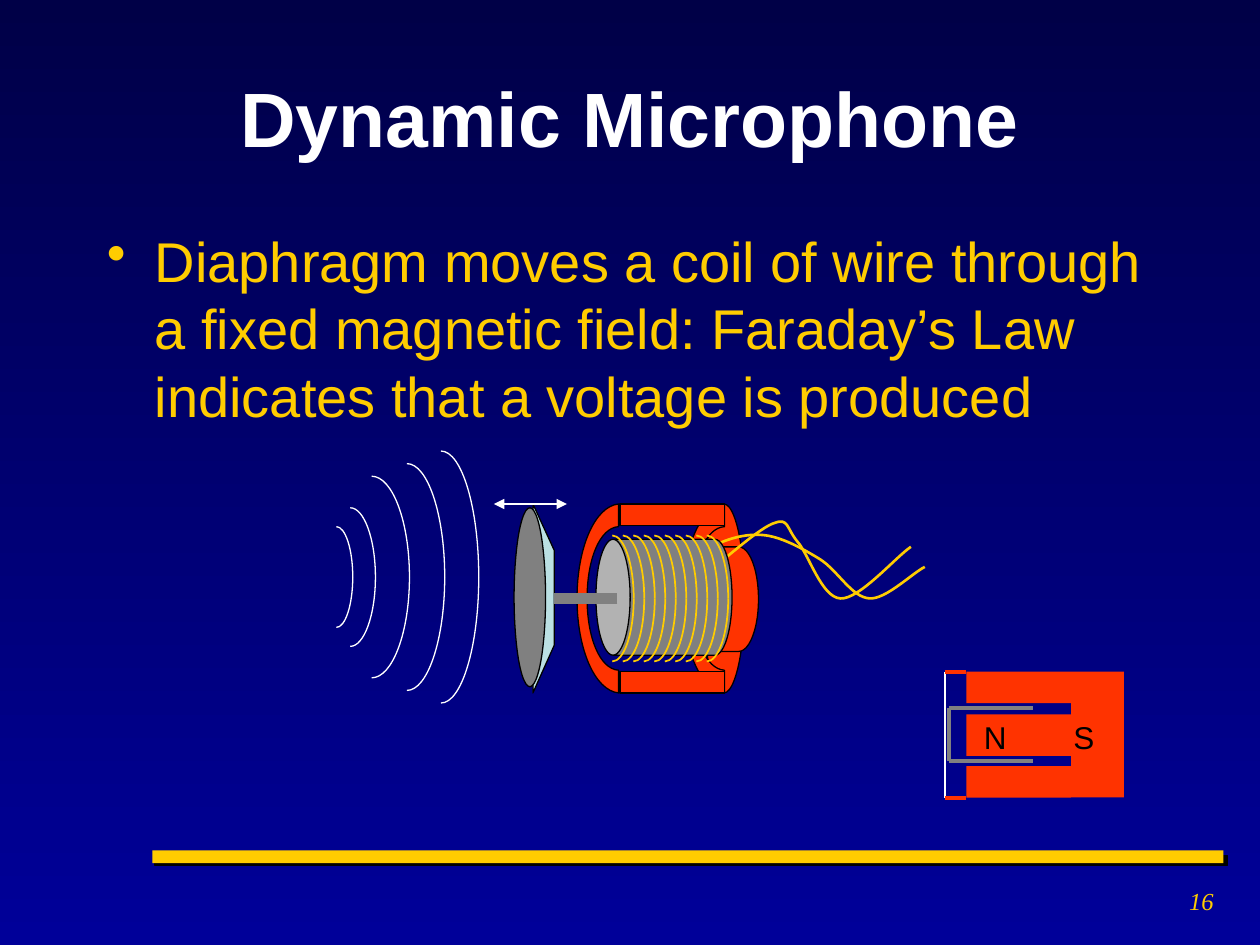
from lxml import etree
from pptx import Presentation
from pptx.dml.color import RGBColor
from pptx.enum.shapes import MSO_CONNECTOR, MSO_SHAPE
from pptx.enum.text import MSO_ANCHOR, PP_ALIGN
from pptx.oxml.ns import qn
from pptx.util import Inches, Pt

RECT, OVAL, CAN = MSO_SHAPE.RECTANGLE, MSO_SHAPE.OVAL, MSO_SHAPE.CAN
STRAIGHT = MSO_CONNECTOR.STRAIGHT
LEFT, CENTER, RIGHT = PP_ALIGN.LEFT, PP_ALIGN.CENTER, PP_ALIGN.RIGHT
TOP, MIDDLE = MSO_ANCHOR.TOP, MSO_ANCHOR.MIDDLE

COLORS = {
    "night": "000047", "navy": "000099", "gold": "FFCC00", "red": "FF3300",
    "gray": "808080", "ice": "BBE0E3", "white": "FFFFFF", "black": "000000",
}


def rgb(name):
    return RGBColor.from_string(COLORS[name])


def paint(shape, fill, line, weight):
    shape.shadow.inherit = False
    if fill:
        shape.fill.solid()
        shape.fill.fore_color.rgb = rgb(fill)
    else:
        shape.fill.background()
    if line:
        shape.line.color.rgb = rgb(line)
        shape.line.width = Pt(weight)
    else:
        shape.line.fill.background()


def add_preset(slide, kind, box, fill, line=None, weight=0.75):
    shape = slide.shapes.add_shape(kind, *map(Inches, box))
    paint(shape, fill, line, weight)
    return shape


def add_lying_can(slide, box, depth, fill):
    can = add_preset(slide, CAN, box, fill, "black")
    can.rotation = 270
    can.adjustments[0] = depth


def add_line(slide, start, end, color, weight, arrows=False):
    line = slide.shapes.add_connector(STRAIGHT, *map(Inches, (*start, *end)))
    line.line.color.rgb = rgb(color)
    line.line.width = Pt(weight)
    if arrows:
        stroke = line.line._get_or_add_ln()
        for end_tag in ("a:headEnd", "a:tailEnd"):
            etree.SubElement(stroke, qn(end_tag), type="triangle")
    etree.SubElement(line._element.spPr, qn("a:effectLst"))


def add_outline(slide, origin, start, segments, fill, line, weight, close=False):
    def place(point):
        return Inches(origin[0] + point[0]), Inches(origin[1] + point[1])

    builder = slide.shapes.build_freeform(*place(start))
    builder.add_line_segments([place(p) for s in segments for p in s], close=close)
    shape = builder.convert_to_shape()
    steps = iter(list(shape._element.iter(qn("a:lnTo"))))
    for segment in segments:
        step = next(steps)
        if len(segment) == 3:
            curve = etree.Element(qn("a:cubicBezTo"))
            step.getparent().replace(step, curve)
            curve.append(step[0])
            for _ in range(2):
                control = next(steps)
                curve.append(control[0])
                control.getparent().remove(control)
    paint(shape, fill, line, weight)


def add_half_arc(slide, left, axis, width, height, color, weight):
    for side in (-1, 1):
        tip = side * height
        bend = ((0.55 * width, tip), (width, 0.55 * tip), (width, 0))
        add_outline(slide, (left, axis), (0, tip), [bend], None, color, weight)


def add_text(slide, box, text, align=LEFT, anchor=TOP, bullet=False, **font):
    frame = slide.shapes.add_textbox(*map(Inches, box)).text_frame
    frame.word_wrap = True
    frame.vertical_anchor = anchor
    paragraph = frame.paragraphs[0]
    paragraph.text = text
    paragraph.alignment = align
    if bullet:
        props = paragraph._p.get_or_add_pPr()
        props.set("marL", str(Inches(0.38)))
        props.set("indent", str(Inches(-0.38)))
        etree.SubElement(props, qn("a:buChar"), char="•")
    run_font = paragraph.runs[0].font
    run_font.color.rgb = rgb(font.pop("color"))
    for name, value in font.items():
        setattr(run_font, name, value)


def add_background(slide):
    fill = slide.background.fill
    fill.gradient()
    fill.gradient_angle = 270
    for stop, color in zip(fill.gradient_stops, ("night", "navy")):
        stop.color.rgb = rgb(color)


def add_footer(slide, left, top):
    add_preset(slide, RECT, (left + 0.02, top + 0.04, 8.51, 0.08), "black", "black")
    add_preset(slide, RECT, (left, top, 8.5, 0.1), "gold")
    add_text(slide, (left + 6.89, top + 0.23, 1.63, 0.52), "16", RIGHT,
             name="Times New Roman", size=Pt(14), italic=True, color="gold")


def add_magnet_ring(slide, left, top):
    bends = [
        ((0.18, 1.31), (0.08, 1.06), (0.08, 0.75)),
        ((0.08, 0.44), (0.18, 0.19), (0.33, 0.18)),
        ((0.33, 0),),
        ((0.14, 0.02), (0, 0.35), (0, 0.75)),
        ((0, 1.15), (0.14, 1.48), (0.33, 1.5)),
    ]
    add_outline(slide, (left, top), (0.33, 1.32), bends, "red", "black", 0.75, True)


def add_magnet(slide, left, top):
    add_preset(slide, OVAL, (left + 1, top, 0.33, 1.5), "red", "black")
    add_lying_can(slide, (left + 0.65, top + 0.38, 0.83, 0.75), 0.418, "red")
    for ring_offset in (0.84, 0):
        add_magnet_ring(slide, left + ring_offset, top)


def add_magnet_bars(slide, left, top):
    for offset in (0, 1.33):
        add_preset(slide, RECT, (left, top + offset, 0.83, 0.17), "red", "black")


def add_wires(slide, left, top):
    wires = [
        ((0, 0.22), [((0.12, 0.16), (0.27, 0.12), (0.41, 0.14)),
                     ((0.55, 0.16), (0.71, 0.25), (0.84, 0.33)),
                     ((0.98, 0.42), (1.09, 0.63), (1.23, 0.64)),
                     ((1.36, 0.65), (1.57, 0.44), (1.67, 0.39))]),
        ((0, 0.39), [((0.08, 0.33), (0.37, 0.07), (0.48, 0.04)),
                     ((0.59, 0), (0.57, 0.08), (0.66, 0.19)),
                     ((0.75, 0.29), (0.85, 0.63), (1, 0.64)),
                     ((1.15, 0.65), (1.44, 0.31), (1.56, 0.23))]),
    ]
    for start, bends in wires:
        add_outline(slide, (left, top), start, bends, None, "gold", 1.5)


def add_coil(slide, left, axis):
    add_lying_can(slide, (left + 0.08, axis - 0.55, 0.92, 1.08), 0.295, "gray")
    for turn in range(10):
        add_half_arc(slide, left + 0.13 + turn / 12, axis, 0.17, 0.5, "gold", 1)


def add_diaphragm(slide, left, axis):
    cone = [((0.32, -0.38),), ((0.32, 0.37),), ((0.15, 0.75),)]
    add_outline(slide, (left, axis), (0.15, -0.75), cone, "ice", "black", 0.75, True)
    add_preset(slide, OVAL, (left, axis - 0.72, 0.25, 1.42), "gray", "black")
    add_line(slide, (left + 0.82, axis), (left + 0.32, axis), "gray", 6)


def add_sound_waves(slide, left, axis):
    waves = [(0, 0.13, 0.4), (0.11, 0.2, 0.55), (0.28, 0.3, 0.8),
             (0.56, 0.3, 0.9), (0.83, 0.3, 1)]
    for offset, width, height in waves:
        add_half_arc(slide, left + offset, axis, width, height, "white", 0.75)


def add_cross_section(slide, left, top):
    core = left + 0.17
    poles = [(core, top + 0.34, 0.83, 0.33), (core, top, 0.83, 0.25),
             (core, top + 0.75, 0.83, 0.25), (core + 0.83, top, 0.42, 1)]
    for pole in poles:
        add_preset(slide, RECT, pole, "red")
    for label, offset in (("N", 0.21), ("S", 0.92)):
        add_text(slide, (left + offset, top + 0.32, 0.5, 0.4), label,
                 name="Arial", size=Pt(18), color="black")
    coil, upper, lower = left + 0.03, top + 0.29, top + 0.71
    add_line(slide, (coil, upper), (coil, lower), "gray", 2.25)
    for side in (upper, lower):
        add_line(slide, (coil, side), (coil + 0.67, side), "gray", 2.25)
    add_line(slide, (left, top), (left, top + 1), "white", 0.75)
    for edge in (top, top + 1):
        add_line(slide, (core, edge), (left, edge), "red", 2.25)


def main():
    deck = Presentation()
    deck.slide_width, deck.slide_height = Inches(10), Inches(7.5)
    slide = deck.slides.add_slide(deck.slide_layouts[6])
    add_background(slide)
    add_footer(slide, 1.21, 6.75)
    add_magnet(slide, 4.58, 4)
    add_text(slide, (0.5, 0.3, 9, 1.25), "Dynamic Microphone", CENTER, MIDDLE,
             name="Arial", size=Pt(44), bold=True, color="white")
    add_text(slide, (0.75, 1.75, 8.75, 4.95),
             "Diaphragm moves a coil of wire through a fixed magnetic field: "
             "Faraday’s Law indicates that a voltage is produced",
             bullet=True, name="Arial", size=Pt(32), color="gold")
    add_wires(slide, 5.67, 4.11)
    add_coil(slide, 4.73, 4.75)
    add_diaphragm(slide, 4.08, 4.75)
    add_sound_waves(slide, 2.67, 4.58)
    add_magnet_bars(slide, 4.92, 4)
    add_line(slide, (3.92, 4), (4.5, 4), "white", 0.75, arrows=True)
    add_cross_section(slide, 7.5, 5.33)
    deck.save("out.pptx")


if __name__ == "__main__":
    main()
